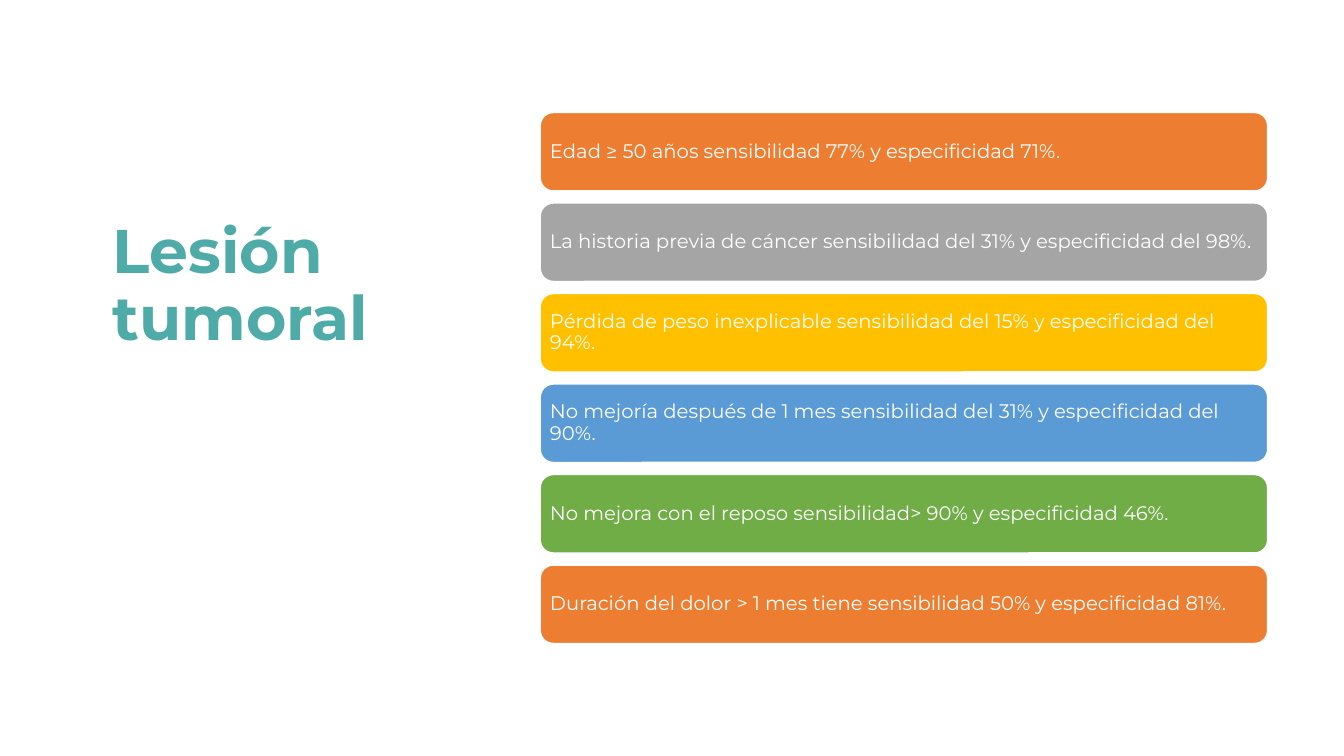
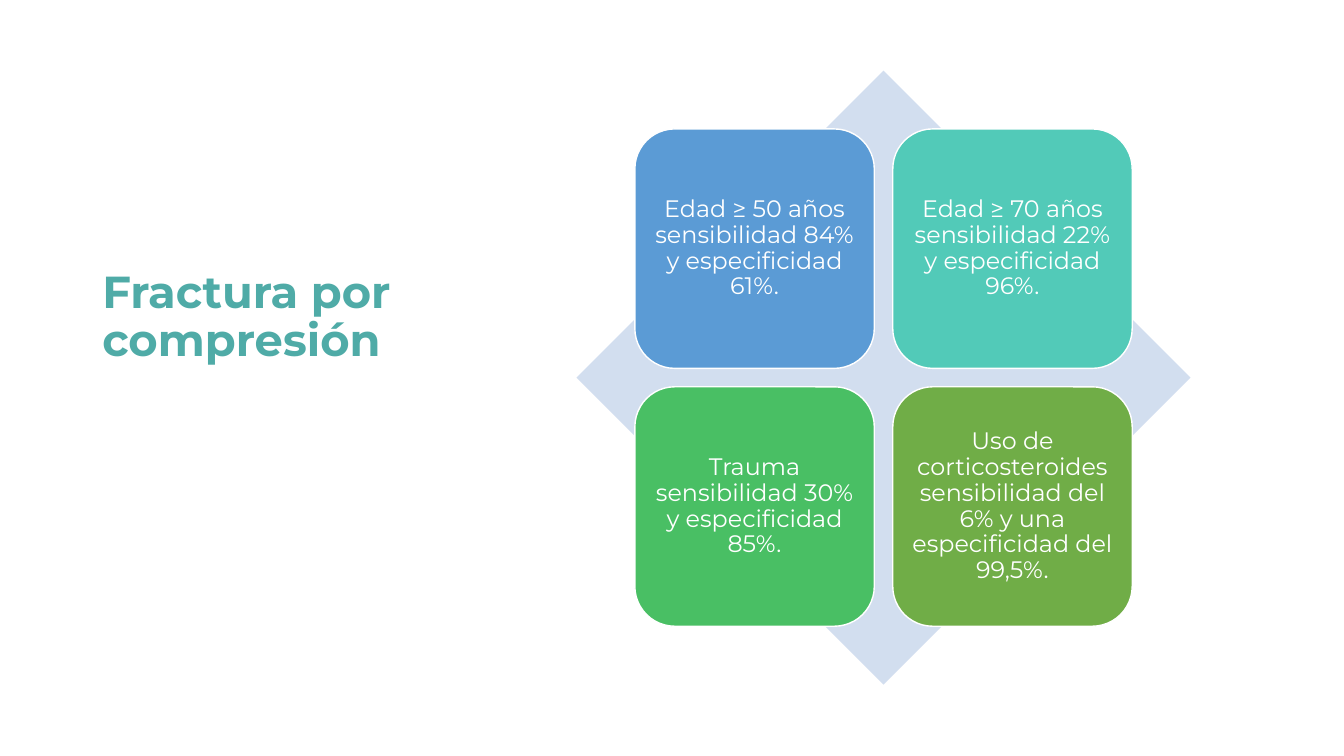
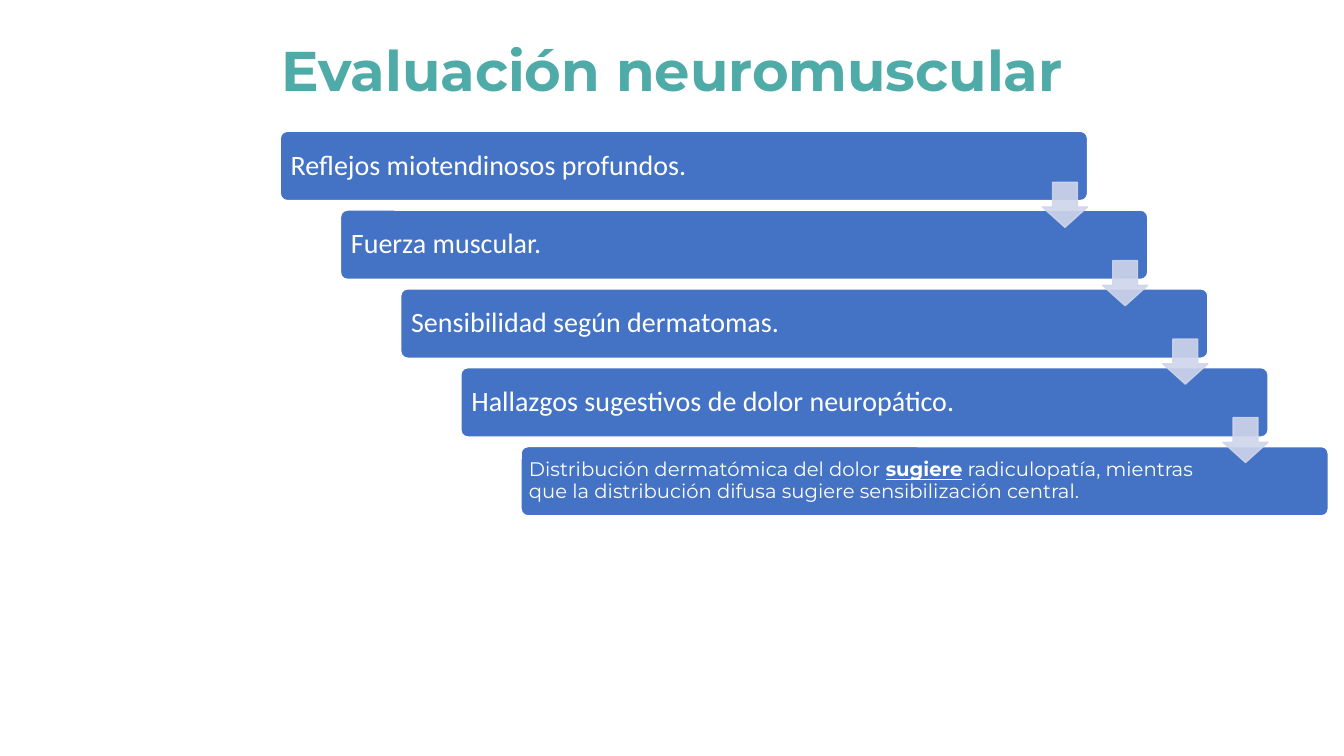
from dataclasses import dataclass

from lxml import etree
from pptx import Presentation, util as u
from pptx.dml.color import RGBColor
from pptx.enum import shapes, text
from pptx.oxml import ns

Pt = u.Pt
Kind = shapes.MSO_SHAPE
Align = text.PP_ALIGN


@dataclass(frozen=True)
class Theme:
    teal: str = "4FABA7"
    white: str = "FFFFFF"
    orange: str = "ED7D31"
    gray: str = "A5A5A5"
    gold: str = "FFC000"
    sky: str = "5B9BD5"
    green: str = "70AD47"
    mint: str = "52CAB8"
    leaf: str = "49BF64"
    pale: str = "D2DEEF"
    blue: str = "4472C4"
    mist: str = "CFD5EA"
    head: str = "Montserrat"
    plain: str = "Calibri"
    large: float = 44
    big: float = 40
    mid: float = 32
    step: float = 20
    tile: float = 17
    note: float = 14


T = Theme()


def apply(item, **values):
    for name, value in values.items():
        setattr(item, name, value)


def write(shape, runs, size, face=T.head, color=T.white, bold=False,
          align=Align.LEFT, pad=None, right=None):
    frame = shape.text_frame
    apply(frame, word_wrap=True, vertical_anchor=text.MSO_ANCHOR.MIDDLE)
    if pad is not None:
        apply(frame, margin_left=Pt(pad), margin_top=Pt(pad),
              margin_bottom=Pt(pad), margin_right=Pt(right or pad))
    para = frame.paragraphs[0]
    apply(para, alignment=align, line_spacing=0.9)
    for words, marks in runs:
        run = para.add_run()
        run.text = words
        apply(run.font, **{"name": face, "size": Pt(size), "bold": bold, **marks})
        run.font.color.rgb = RGBColor.from_string(color)


def title(slide, words, box, size, align=Align.LEFT):
    shape = slide.shapes.add_textbox(*map(Pt, box))
    write(shape, [(words, {})], size, color=T.teal, bold=True, align=align)


def block(slide, kind, box, fill, line=None, adjust=()):
    shape = slide.shapes.add_shape(kind, *map(Pt, box))
    shape.shadow.inherit = False
    shape.fill.solid()
    shape.fill.fore_color.rgb = RGBColor.from_string(fill)
    if line:
        shape.line.width = Pt(1)
        shape.line.color.rgb = RGBColor.from_string(line)
    else:
        shape.line.fill.background()
    for index, value in enumerate(adjust):
        shape.adjustments[index] = value
    return shape


def fade(shape, percent):
    for color in shape.fill._xPr.iter(ns.qn("a:srgbClr")):
        etree.SubElement(color, ns.qn("a:alpha"), val=str(percent * 1000))


def tumor(slide):
    title(slide, "Lesión tumoral", (73.4, -11.5, 265.7, 433.4), T.large)
    rows = [
        ("Edad ≥ 50 años sensibilidad 77% y especificidad 71%.", T.orange),
        ("La historia previa de cáncer sensibilidad del 31% y especificidad del 98%.", T.gray),
        ("Pérdida de peso inexplicable sensibilidad del 15% y especificidad del 94%.", T.gold),
        ("No mejoría después de 1 mes sensibilidad del 31% y especificidad del 90%.", T.sky),
        ("No mejora con el reposo sensibilidad> 90% y especificidad 46%.", T.green),
        ("Duración del dolor > 1 mes tiene sensibilidad 50% y especificidad 81%.", T.orange),
    ]
    for row, (words, fill) in enumerate(rows):
        box = (385.9, 80.4 + row * 64.65, 519.6, 56)
        bar = block(slide, Kind.ROUNDED_RECTANGLE, box, fill, T.white)
        write(bar, [(words, {})], T.note, pad=4.2)


def crush(slide):
    title(slide, "Fractura por compresión", (66, 14.4, 263, 425.5), T.mid)
    block(slide, Kind.DIAMOND, (411.8, 50.4, 438.6, 438.6), T.pale)
    tiles = [
        ("Edad ≥ 50 años sensibilidad 84% y especificidad 61%.", T.sky),
        ("Edad ≥ 70 años sensibilidad 22% y especificidad 96%.", T.mint),
        ("Trauma sensibilidad 30% y especificidad 85%.", T.leaf),
        ("Uso de corticosteroides sensibilidad del 6% y una especificidad del 99,5%.", T.green),
    ]
    for index, (words, fill) in enumerate(tiles):
        row, col = divmod(index, 2)
        box = (453.5 + col * 184.2, 92.1 + row * 184.2, 171, 171)
        tile = block(slide, Kind.ROUNDED_RECTANGLE, box, fill, T.white)
        write(tile, [(words, {})], T.tile, align=Align.CENTER, pad=5.1)


def nerve(slide):
    title(slide, "Evaluación neuromuscular", (66, 0, 828, 104.4), T.big, Align.CENTER)
    steps = [
        "Reflejos miotendinosos profundos.",
        "Fuerza muscular.",
        "Sensibilidad según dermatomas.",
        "Hallazgos sugestivos de dolor neuropático.",
    ]
    detail = [
        ("Distribución dermatómica del dolor ", {}),
        ("sugiere", {"bold": True, "underline": True}),
        (" radiculopatía, mientras que la distribución difusa sugiere sensibilización central.", {}),
    ]
    rows = [([(words, {})], T.step, T.plain, 6) for words in steps]
    rows.append((detail, T.note, T.head, 4.2))
    for row, (runs, size, face, pad) in enumerate(rows):
        box = (200.2 + row * 43, 93.8 + row * 56.3, 576.6, 49.5)
        bar = block(slide, Kind.ROUNDED_RECTANGLE, box, T.blue, T.white, [0.1])
        write(bar, runs, size, face, pad=pad, right=80)
    for row in range(len(steps)):
        box = (744.6 + row * 43, 130.2 + row * 56, 32.2, 32.2)
        arrow = block(slide, Kind.DOWN_ARROW, box, T.mist, T.mist, [0.55, 0.45])
        fade(arrow, 90)


def main():
    deck = Presentation()
    apply(deck, slide_width=Pt(960), slide_height=Pt(540))
    for build in (tumor, crush, nerve):
        build(deck.slides.add_slide(deck.slide_layouts[6]))
    deck.save("out.pptx")


if __name__ == "__main__":
    main()
